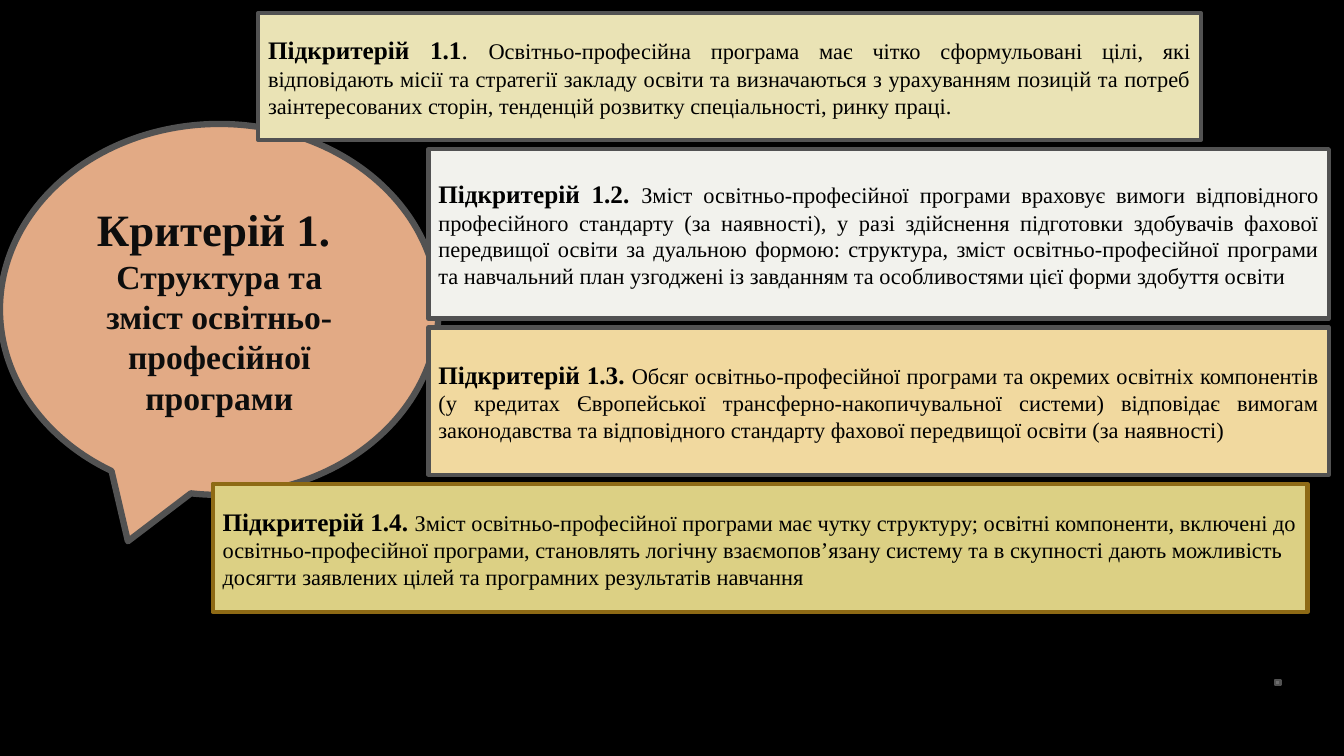
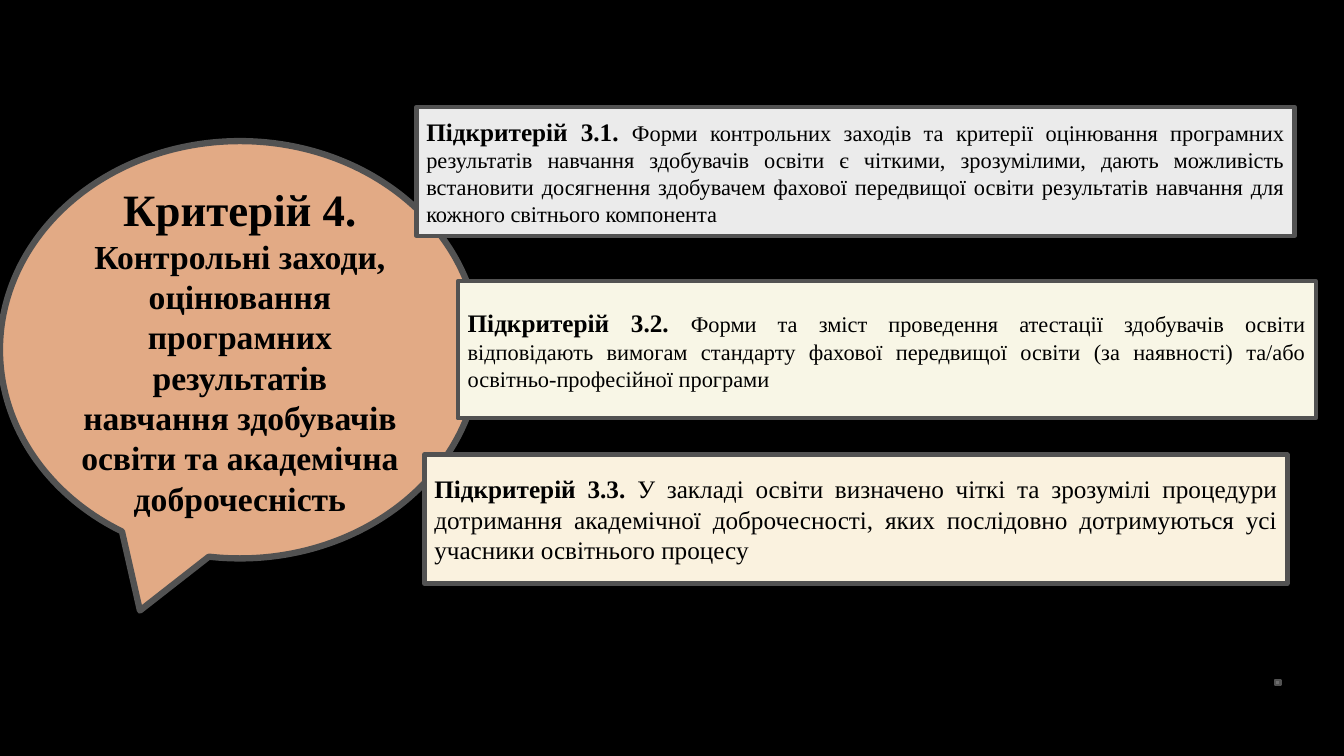
from pptx import Presentation
from pptx.dml.color import RGBColor as Rgb
from pptx.enum.shapes import MSO_SHAPE as Shape
from pptx.enum.text import MSO_ANCHOR as Anchor, PP_ALIGN as Align
from pptx.util import Emu, Pt

PX = 9144
WIDE, HIGH = 1333, 750
FONT = "Times New Roman"
HEX = {
    "back": "000000", "ink": "000000", "soft": "0D0D0D",
    "edge": "525252", "gold": "8E6A15", "dot": "6F6F6F",
    "peach": "E2AA85", "straw": "EAE3B5", "pearl": "F2F2ED",
    "sand": "F1D99F", "olive": "DCD084", "mist": "EBEBEB",
    "ivory": "F8F6E6", "cream": "FAF2DF",
}


def px(num):
    return Emu(num * PX)


def tint(name):
    return Rgb.from_string(HEX[name])


def block(slide, kind, box, fill, edge, width):
    """Add a flat preset shape with a solid fill and outline."""
    shape = slide.shapes.add_shape(kind, *map(px, box))
    shape.shadow.inherit = False
    shape.fill.solid()
    shape.fill.fore_color.rgb = tint(fill)
    shape.line.color.rgb = tint(edge)
    shape.line.width = Pt(width)
    return shape


def write(shape, paras, align, ink="ink"):
    """Fill a shape with paragraphs, each a list of (text, size, bold)."""
    frame = shape.text_frame
    frame.word_wrap = True
    frame.vertical_anchor = Anchor.MIDDLE
    for i, runs in enumerate(paras):
        para = frame.add_paragraph() if i else frame.paragraphs[0]
        para.alignment = align
        para.font.name = FONT
        para.font.color.rgb = tint(ink)
        for text, size, bold in runs:
            run = para.add_run()
            run.text = text
            run.font.size = Pt(size)
            run.font.bold = bold


def bubble(slide, box, paras, ink="ink"):
    shape = block(slide, Shape.OVAL_CALLOUT, box, "peach", "edge", 4.5)
    write(shape, paras, Align.CENTER, ink)


def panel(slide, box, fill, head, body, size=16, edge="edge",
          align=Align.JUSTIFY, stop=""):
    """Add a text panel; stop is plain text in the size of the head."""
    shape = block(slide, Shape.RECTANGLE, box, fill, edge, 3)
    runs = [(head, 18, True), (stop, 18, False), (body, size, False)]
    write(shape, [[run for run in runs if run[0]]], align)


def base(deck):
    """Add a blank slide with the dark background and corner dot."""
    slide = deck.slides.add_slide(deck.slide_layouts[6])
    slide.background.fill.solid()
    slide.background.fill.fore_color.rgb = tint("back")
    block(slide, Shape.RECTANGLE, (1265, 675, 5, 5), "dot", "edge", 1.5)
    return slide


def content(deck):
    slide = base(deck)
    bubble(slide, (0, 123, 435, 368), [
        [("Критерій 1. ", 32, True)],
        [("Структура та зміст освітньо-професійної програми", 24, True)],
    ], "soft")
    panel(slide, (425, 148, 893, 168), "pearl", "Підкритерій 1.2. ",
          "Зміст освітньо-професійної програми враховує вимоги "
          "відповідного професійного стандарту (за наявності), у разі "
          "здійснення підготовки здобувачів фахової передвищої освіти за "
          "дуальною формою: структура, зміст освітньо-професійної програми "
          "та навчальний план узгоджені із завданням та особливостями цієї "
          "форми здобуття освіти")
    panel(slide, (425, 325, 893, 146), "sand", "Підкритерій 1.3. ",
          "Обсяг освітньо-професійної програми та окремих освітніх "
          "компонентів (у кредитах Європейської трансферно-накопичувальної "
          "системи) відповідає вимогам законодавства та відповідного "
          "стандарту фахової передвищої освіти (за наявності)")
    panel(slide, (211, 480, 1086, 127), "olive", "Підкритерій 1.4. ",
          "Зміст освітньо-професійної програми має чутку структуру; освітні "
          "компоненти, включені до освітньо-професійної програми, "
          "становлять логічну взаємопов’язану систему та в скупності дають "
          "можливість досягти заявлених цілей та програмних результатів "
          "навчання", edge="gold", align=Align.LEFT)
    panel(slide, (256, 13, 935, 126), "straw", "Підкритерій 1.1",
          "Освітньо-професійна програма має чітко сформульовані цілі, які "
          "відповідають місії та стратегії закладу освіти та визначаються з "
          "урахуванням позицій та потреб заінтересованих сторін, тенденцій "
          "розвитку спеціальності, ринку праці.", stop=". ")


def control(deck):
    slide = base(deck)
    bubble(slide, (0, 140, 476, 414), [[
        ("Критерій 4. ", 32, True),
        ("Контрольні заходи, оцінювання програмних результатів навчання "
         "здобувачів освіти та академічна доброчесність", 24, True),
    ]])
    panel(slide, (454, 279, 851, 136), "ivory", "Підкритерій 3.2. ",
          "Форми та зміст проведення атестації здобувачів освіти "
          "відповідають вимогам стандарту фахової передвищої освіти (за "
          "наявності) та/або освітньо-професійної програми")
    panel(slide, (421, 451, 856, 128), "cream", "Підкритерій 3.3. ",
          "У закладі освіти визначено чіткі та зрозумілі процедури "
          "дотримання академічної доброчесності, яких послідовно "
          "дотримуються усі учасники освітнього процесу", size=18)
    panel(slide, (413, 106, 871, 128), "mist", "Підкритерій 3.1. ",
          "Форми контрольних заходів та критерії оцінювання програмних "
          "результатів навчання здобувачів освіти є чіткими, зрозумілими, "
          "дають можливість встановити досягнення здобувачем фахової "
          "передвищої освіти результатів навчання для кожного світнього "
          "компонента")


def main():
    deck = Presentation()
    deck.slide_width, deck.slide_height = px(WIDE), px(HIGH)
    content(deck)
    control(deck)
    deck.save("out.pptx")


if __name__ == "__main__":
    main()
